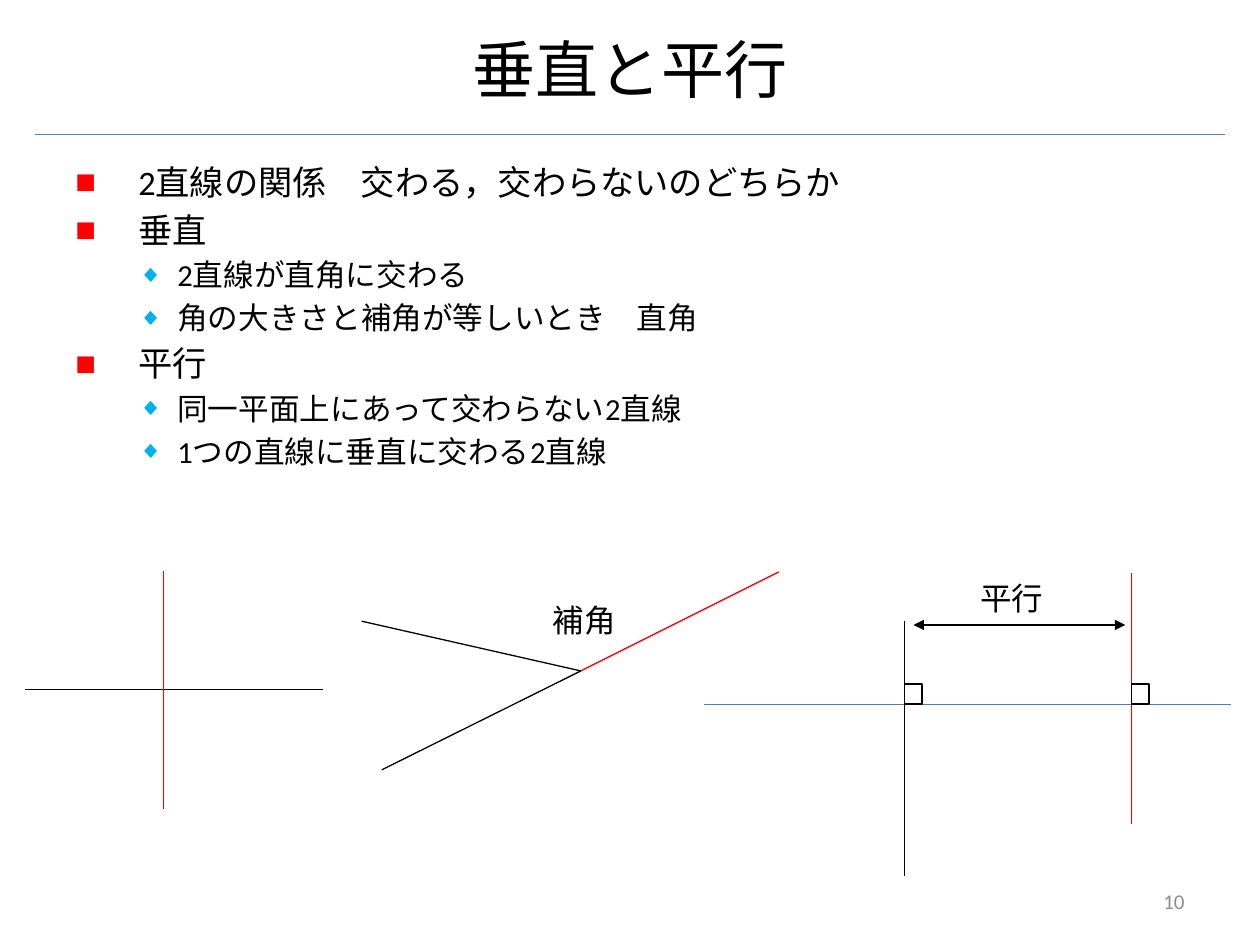
from lxml.etree import SubElement
from pptx import Presentation
from pptx.dml.color import RGBColor
from pptx.enum.shapes import MSO_CONNECTOR, MSO_SHAPE
from pptx.enum.text import MSO_ANCHOR, PP_ALIGN
from pptx.oxml.ns import qn
from pptx.util import Inches, Pt

COLORS = {"ink": "000000", "rule": "4B7EBC", "accent": "FF0000",
          "diamond": "00B0F0", "muted": "8C8C8C"}
LEVELS = [
    {"size": 19.6, "indent": 0.5, "hanging": 0.5, "mark": "■", "color": "accent", "scale": 100},
    {"size": 17.5, "indent": 0.81, "hanging": 0.31, "mark": "◆", "color": "diamond", "scale": 80},
]
POINTS = [
    (0, "2直線の関係　交わる，交わらないのどちらか"),
    (0, "垂直"),
    (1, "2直線が直角に交わる"),
    (1, "角の大きさと補角が等しいとき　直角"),
    (0, "平行"),
    (1, "同一平面上にあって交わらない2直線"),
    (1, "1つの直線に垂直に交わる2直線"),
]


def style_font(paragraph, size, font="Calibri", color="ink"):
    """Set the font of a whole paragraph."""
    paragraph.font.name = font
    paragraph.font.size = Pt(size)
    paragraph.font.color.rgb = RGBColor.from_string(COLORS[color])


def add_frame(slide, left, top, width, height, anchor=MSO_ANCHOR.TOP):
    """Add a wrapping text box and return its text frame."""
    box = slide.shapes.add_textbox(Inches(left), Inches(top), Inches(width), Inches(height))
    box.text_frame.word_wrap = True
    box.text_frame.vertical_anchor = anchor
    return box.text_frame


def add_label(slide, left, top, width, height, text, size, font="Calibri",
              color="ink", align=PP_ALIGN.LEFT, anchor=MSO_ANCHOR.TOP):
    """Add a single line of text."""
    paragraph = add_frame(slide, left, top, width, height, anchor).paragraphs[0]
    paragraph.text = text
    paragraph.alignment = align
    style_font(paragraph, size, font, color)


def add_line(slide, start, end, color="ink", arrows=False):
    """Add a thin straight line, with arrowheads at both ends if asked."""
    line = slide.shapes.add_connector(
        MSO_CONNECTOR.STRAIGHT, *(Inches(value) for value in (*start, *end)))
    line.line.width = Pt(0.75)
    line.line.color.rgb = RGBColor.from_string(COLORS[color])
    if arrows:
        for tag in ("a:headEnd", "a:tailEnd"):
            SubElement(line.line._get_or_add_ln(), qn(tag), type="triangle")
    SubElement(line._element.spPr, qn("a:effectLst"))


def add_bullet(paragraph, level):
    """Give a paragraph the hanging indent and bullet of its level."""
    properties = paragraph._p.get_or_add_pPr()
    properties.set("marL", str(Inches(level["indent"])))
    properties.set("indent", str(-Inches(level["hanging"])))
    bullet_color = SubElement(properties, qn("a:buClr"))
    SubElement(bullet_color, qn("a:srgbClr"), val=COLORS[level["color"]])
    SubElement(properties, qn("a:buSzPct"), val=str(level["scale"] * 1000))
    SubElement(properties, qn("a:buFont"), typeface="Arial")
    SubElement(properties, qn("a:buChar"), char=level["mark"])


def add_header(slide, left, top, width, height):
    """Place the title above a full-width rule."""
    bottom = top + height
    add_line(slide, (left, bottom), (left + width, bottom), "rule")
    add_label(slide, left + 0.22, top, width - 0.44, height, "垂直と平行", 36,
              align=PP_ALIGN.CENTER, anchor=MSO_ANCHOR.MIDDLE)


def add_points(slide, left, top, width, height):
    """Place the two-level bullet list."""
    frame = add_frame(slide, left, top, width, height)
    for index, (depth, text) in enumerate(POINTS):
        paragraph = frame.add_paragraph() if index else frame.paragraphs[0]
        level = LEVELS[depth]
        paragraph.text = text
        paragraph.level = depth
        paragraph.space_before = Pt(level["size"] * 0.2)
        style_font(paragraph, level["size"])
        add_bullet(paragraph, level)


def add_perpendicular(slide, left, top, width, height):
    """Draw two lines crossing at a right angle."""
    level_y, upright_x = top + height / 2, left + 1.1
    add_line(slide, (left, level_y), (left + width, level_y))
    add_line(slide, (upright_x, top), (upright_x, top + height), "accent")


def add_supplement(slide, left, top, width, height):
    """Draw an angle with one side extended to show its supplement."""
    vertex = (left + 1.74, top + height / 2)
    add_line(slide, (left + 0.16, top + height), vertex)
    add_line(slide, (left, top + 0.39), vertex)
    add_line(slide, (left + width, top), vertex, "accent")
    add_label(slide, left + 1.42, top + 0.18, 0.87, 0.4, "補角", 18, "Arial")


def add_parallel(slide, left, top, width):
    """Draw two parallel lines perpendicular to a third."""
    base_y, first_x, second_x = top + 1.04, left + 1.59, left + 3.39
    mark_width, mark_height = 0.14, 0.16
    add_line(slide, (left, base_y), (left + width, base_y), "rule")
    add_line(slide, (first_x, top + 0.38), (first_x, top + 2.4))
    add_line(slide, (second_x, top), (second_x, top + 1.99), "accent")
    for upright_x in (first_x, second_x):
        right_angle = slide.shapes.add_shape(
            MSO_SHAPE.RECTANGLE, Inches(upright_x), Inches(base_y - mark_height),
            Inches(mark_width), Inches(mark_height))
        right_angle.shadow.inherit = False
        right_angle.fill.background()
        right_angle.line.width = Pt(1)
        right_angle.line.color.rgb = RGBColor.from_string(COLORS["ink"])
    add_line(slide, (first_x + 0.07, top + 0.41), (second_x - 0.05, top + 0.41), arrows=True)
    add_label(slide, left + 2.09, top, 0.83, 0.4, "平行", 18, "Arial")


def main():
    """Build and save the slide."""
    presentation = Presentation()
    presentation.slide_width, presentation.slide_height = Inches(10), Inches(7.5)
    slide = presentation.slides.add_slide(presentation.slide_layouts[6])
    add_header(slide, 0.28, 0.01, 9.44, 1.06)
    add_label(slide, 7.17, 6.95, 2.33, 0.4, "10", 12, color="muted",
              align=PP_ALIGN.RIGHT, anchor=MSO_ANCHOR.MIDDLE)
    add_points(slide, 0.5, 1.23, 9, 2.36)
    add_perpendicular(slide, 0.2, 4.53, 2.36, 1.89)
    add_supplement(slide, 2.87, 4.54, 3.31, 1.57)
    add_parallel(slide, 5.59, 4.55, 4.18)
    presentation.save("out.pptx")


if __name__ == "__main__":
    main()
